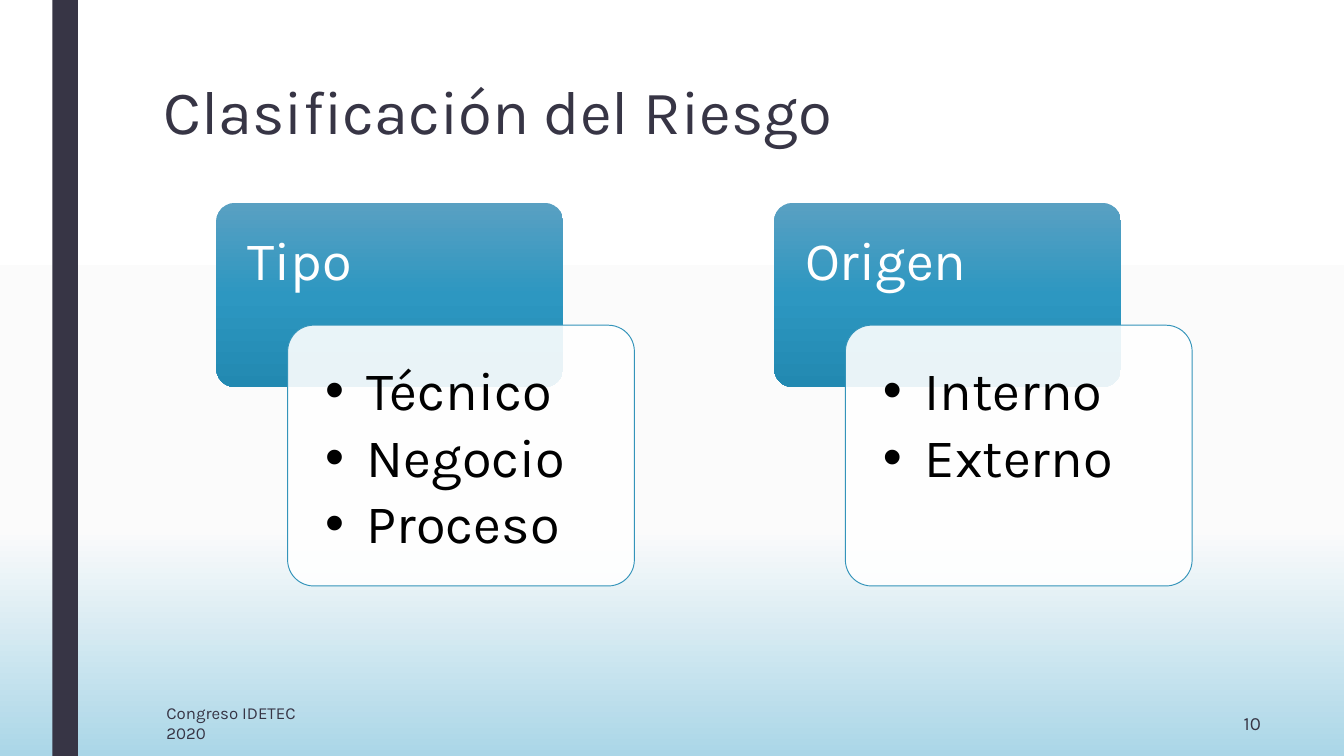
from lxml import etree
from pptx import Presentation
from pptx.dml.color import RGBColor
from pptx.enum.shapes import MSO_SHAPE
from pptx.enum.text import MSO_ANCHOR, PP_ALIGN
from pptx.oxml.ns import qn
from pptx.util import Inches, Pt

RECT = MSO_SHAPE.RECTANGLE
ROUNDED = MSO_SHAPE.ROUNDED_RECTANGLE
TOP = MSO_ANCHOR.TOP
MIDDLE = MSO_ANCHOR.MIDDLE
LEFT = PP_ALIGN.LEFT
RIGHT = PP_ALIGN.RIGHT

FONT = "Karla"
DARK = RGBColor(0x37, 0x35, 0x45)
WHITE = RGBColor(0xFF, 0xFF, 0xFF)
BLACK = RGBColor(0, 0, 0)
BLUE = RGBColor(0x34, 0x94, 0xBA)
PAGE_STOPS = [
    (0, WHITE),
    (70, RGBColor(0xFB, 0xFB, 0xFB)),
    (100, RGBColor(0xAA, 0xD6, 0xE7)),
]
HEADER_STOPS = [
    (0, RGBColor(0x59, 0xA0, 0xC2)),
    (50, RGBColor(0x2D, 0x97, 0xC1)),
    (100, RGBColor(0x22, 0x89, 0xB1)),
]

CARDS = [
    ("Tipo", ["Técnico", "Negocio", "Proceso"]),
    ("Origen", ["Interno", "Externo"]),
]
CARD_LEFT, CARD_TOP, CARD_STEP = 1.61, 1.51, 4.15


def set_gradient(fill, element, stops):
    fill.gradient()
    fill.gradient_angle = 270
    stop_list = next(element.iter(qn("a:gsLst")))
    for stop in list(stop_list):
        stop_list.remove(stop)
    for position, color in stops:
        stop = etree.SubElement(stop_list, qn("a:gs"), pos=str(position * 1000))
        etree.SubElement(stop, qn("a:srgbClr"), val=str(color))


def add_box(slide, kind, left, top, width, height):
    sp = slide.shapes.add_shape(
        kind, Inches(left), Inches(top), Inches(width), Inches(height)
    )
    sp.shadow.inherit = False
    sp.line.fill.background()
    if kind == ROUNDED:
        sp.adjustments[0] = 0.1
    return sp


def add_text(slide, box, lines, size, color, anchor=TOP, align=LEFT,
             spacing=None, after=0, insets=(0.1, 0.05, 0.1, 0.05)):
    tf = slide.shapes.add_textbox(*[Inches(v) for v in box]).text_frame
    tf.word_wrap = True
    tf.vertical_anchor = anchor
    tf.margin_left, tf.margin_top, tf.margin_right, tf.margin_bottom = [
        Inches(v) for v in insets
    ]
    tf.text = "\n".join(lines)
    for p in tf.paragraphs:
        p.alignment = align
        p.line_spacing = spacing
        p.space_after = Pt(after)
        font = p.runs[0].font
        font.name = FONT
        font.size = Pt(size)
        font.color.rgb = color
    return tf


def add_bullets(tf):
    for p in tf.paragraphs:
        p_pr = p._p.get_or_add_pPr()
        p_pr.set("marL", str(Inches(0.31)))
        p_pr.set("indent", str(-Inches(0.31)))
        etree.SubElement(p_pr, qn("a:buFont"), typeface="Arial")
        etree.SubElement(p_pr, qn("a:buChar"), char="•")


def add_card(slide, left, top, heading, items):
    header = add_box(slide, ROUNDED, left, top, 2.58, 1.37)
    set_gradient(header.fill, header.element, HEADER_STOPS)
    add_text(slide, (left, top, 2.58, 0.91), [heading], 29, WHITE,
             spacing=0.9, insets=(0.23, 0.23, 0.23, 0.12))

    panel = add_box(slide, ROUNDED, left + 0.53, top + 0.91, 2.58, 1.94)
    panel.fill.solid()
    panel.fill.fore_color.rgb = WHITE
    fill_color = next(panel.element.spPr.iter(qn("a:srgbClr")))
    etree.SubElement(fill_color, qn("a:alpha"), val="90000")
    panel.line.color.rgb = BLUE
    panel.line.width = Pt(0.5)
    tf = add_text(slide, (left + 0.58, top + 0.97, 2.47, 1.83), items, 29, BLACK,
                  spacing=0.9, after=4.3, insets=(0.23,) * 4)
    add_bullets(tf)


def add_frame(slide, width, height):
    set_gradient(slide.background.fill, slide.element, PAGE_STOPS)
    bar = add_box(slide, RECT, 0.39, 0, 0.19, height)
    bar.fill.solid()
    bar.fill.fore_color.rgb = DARK
    add_text(slide, (1.12, 0.56, width - 2.12, 1.22),
             ["Clasificación del Riesgo"], 33, DARK, spacing=0.89)
    footer_top = height - 0.41
    add_text(slide, (1.14, footer_top, 1.46, 0.33),
             ["Congreso IDETEC 2020"], 9, DARK, MIDDLE)
    add_text(slide, (width - 1.83, footer_top, 1.31, 0.33),
             ["10"], 10, DARK, MIDDLE, RIGHT)


def main():
    width = 10
    height = width * 9 / 16
    prs = Presentation()
    prs.slide_width = Inches(width)
    prs.slide_height = Inches(height)
    slide = prs.slides.add_slide(prs.slide_layouts[6])
    add_frame(slide, width, height)
    for index, (heading, items) in enumerate(CARDS):
        add_card(slide, CARD_LEFT + index * CARD_STEP, CARD_TOP, heading, items)
    prs.save("out.pptx")


if __name__ == "__main__":
    main()
